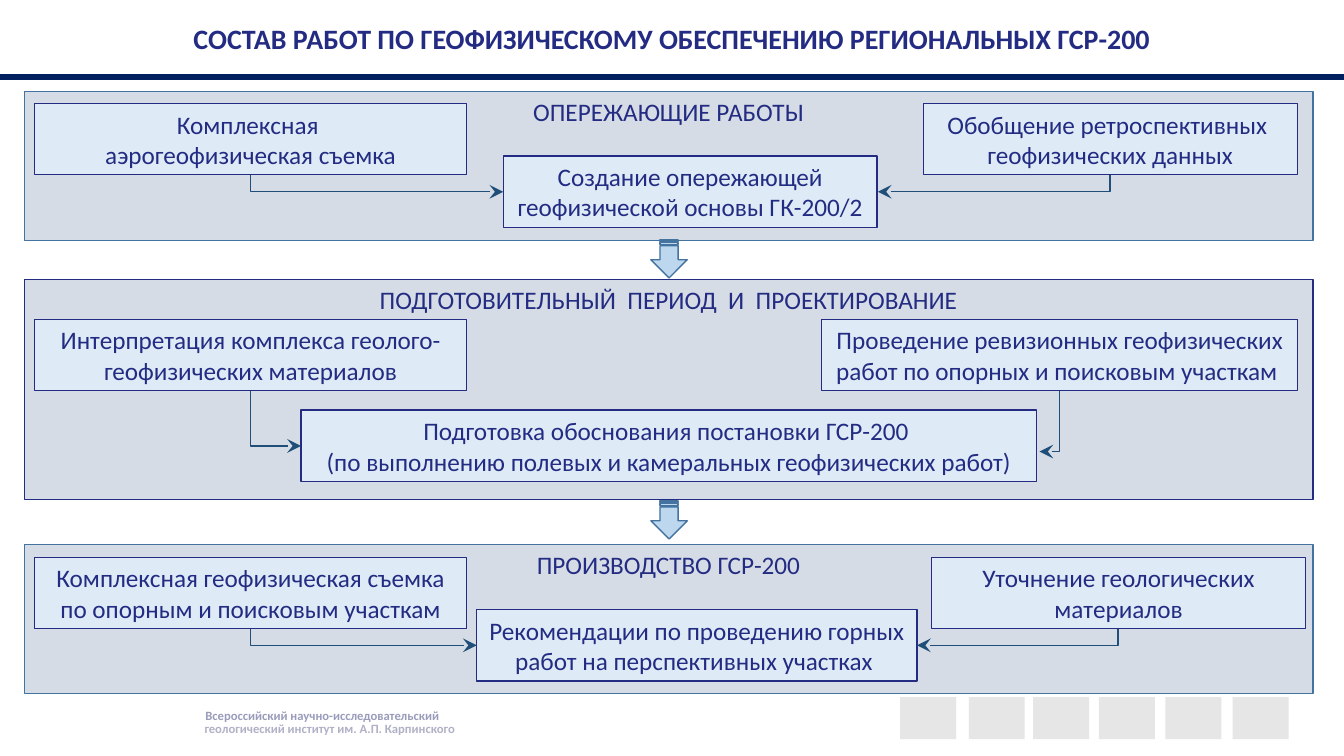
import pptx
import pptx.util
import pptx.dml.color
import pptx.enum.shapes
import pptx.enum.text
import pptx.oxml
import pptx.oxml.ns

Pt = pptx.util.Pt
RGB = pptx.dml.color.RGBColor
KIND = pptx.enum.shapes.MSO_SHAPE
LINK = pptx.enum.shapes.MSO_CONNECTOR
ALIGN = pptx.enum.text.PP_ALIGN
ANCHOR = pptx.enum.text.MSO_ANCHOR
qn = pptx.oxml.ns.qn

NAVY = RGB(0x23, 0x2C, 0x82)
RULE = RGB(0x00, 0x20, 0x60)
PANEL = RGB(0xD6, 0xDC, 0xE5)
EDGE = RGB(0x43, 0x73, 0x9E)
PALE = RGB(0xDE, 0xEB, 0xF7)
ARROW = RGB(0xBD, 0xD7, 0xEE)
WIRE = RGB(0x1F, 0x4E, 0x79)
GREY = RGB(0xD9, 0xD9, 0xD9)
LILAC = RGB(0x9A, 0x9C, 0xBB)
MIST = RGB(0xB0, 0xB1, 0xC6)

deck = pptx.Presentation()
deck.slide_width, deck.slide_height = Pt(960), Pt(540)
slide = deck.slides.add_slide(deck.slide_layouts[5])
shapes = slide.shapes


def block(kind, area, fill, edge=None, width=1):
    shape = shapes.add_shape(kind, *map(Pt, area))
    shape.shadow.inherit = False
    shape.fill.solid()
    shape.fill.fore_color.rgb = fill
    if edge is None:
        shape.line.fill.background()
    else:
        shape.line.color.rgb = edge
        shape.line.width = Pt(width)
    return shape


def write(shape, lines, size=18, color=NAVY, bold=False, align=ALIGN.CENTER):
    frame = shape.text_frame
    frame.word_wrap = True
    for i, line in enumerate(lines):
        para = frame.paragraphs[0] if i == 0 else frame.add_paragraph()
        para.alignment = align
        run = para.add_run()
        run.text = line
        run.font.name = "Calibri"
        run.font.size = Pt(size)
        run.font.bold = bold
        run.font.color.rgb = color


title = shapes.title
title.left, title.top, title.width, title.height = Pt(0), Pt(0), Pt(960), Pt(55)
title.text_frame.vertical_anchor = ANCHOR.MIDDLE
write(title, ["СОСТАВ РАБОТ ПО ГЕОФИЗИЧЕСКОМУ ОБЕСПЕЧЕНИЮ РЕГИОНАЛЬНЫХ ГСР-200"],
      20, bold=True)

credits = [
    (139, 511.2, "геологический институт им. А.П. Карпинского", MIST),
    (139.6, 502, "Всероссийский научно-исследовательский", LILAC),
]
for left, top, words, color in credits:
    note = shapes.add_textbox(Pt(left), Pt(top), Pt(195), Pt(18))
    write(note, [words], 9, color, True, ALIGN.LEFT)
    note.text_frame.word_wrap = False

for left in (643, 692, 738, 785, 832.5, 880.5):
    tile = block(KIND.RECTANGLE, (left, 498, 40, 30), GREY)
    tint = tile.fill._xPr.find(".//" + qn("a:srgbClr"))
    tint.append(pptx.oxml.parse_xml(
        '<a:alpha xmlns:a="http://schemas.openxmlformats.org/drawingml/2006/main" val="65000"/>'))

stages = [
    (65.5, 106.5, EDGE, "ОПЕРЕЖАЮЩИЕ РАБОТЫ", [
        (25, 74, 308, 0.75, ["Комплексная ", "аэрогеофизическая съемка"]),
        (659.5, 74, 267, 0.75, ["Обобщение ретроспективных ", "геофизических данных"]),
        (359.5, 111.5, 267, 1, ["Создание опережающей геофизической основы ГК-200/2"]),
    ]),
    (199.5, 157.5, NAVY, "ПОДГОТОВИТЕЛЬНЫЙ  ПЕРИОД  И  ПРОЕКТИРОВАНИЕ", [
        (25, 228, 308, 0.75, ["Интерпретация комплекса геолого-геофизических материалов"]),
        (587, 228, 340, 0.75,
         ["Проведение ревизионных геофизических работ по опорных и поисковым участкам "]),
        (215, 293, 525.5, 1, ["Подготовка обоснования постановки ГСР-200 ",
                              "(по выполнению полевых и камеральных геофизических работ)"]),
    ]),
    (389, 106.5, EDGE, "ПРОИЗВОДСТВО ГСР-200", [
        (25, 398, 308, 0.75, ["Комплексная геофизическая съемка по опорным и поисковым участкам"]),
        (665.5, 398, 267, 0.75, ["Уточнение геологических материалов"]),
        (340.5, 435.5, 314.5, 1,
         ["Рекомендации по проведению горных работ на перспективных участках "]),
    ]),
]
for top, height, edge, head, boxes in stages:
    block(KIND.RECTANGLE, (17.3, top, 920.5, height), PANEL, edge)
    label = shapes.add_textbox(Pt(17.3), Pt(top), Pt(920.5), Pt(29))
    write(label, [head])
    for left, y, width, line, lines in boxes:
        write(block(KIND.RECTANGLE, (left, y, width, 51), PALE, NAVY, line), lines)

for top in (172, 358.5):
    arrow = block(KIND.STRIPED_RIGHT_ARROW, (464.4, top, 27, 26), ARROW, EDGE)
    arrow.rotation = 90

wires = [
    (179, 125, 359.5, 137),
    (793, 125, 627, 137),
    (179, 279, 215, 318.5),
    (757, 279, 742.5, 322.5),
    (179, 449, 340.5, 461),
    (798.5, 449, 655, 461),
]
links = [shapes.add_connector(LINK.STRAIGHT, Pt(0), Pt(55), Pt(960), Pt(55))]
for x1, y1, x2, y2 in wires:
    wide, high = y2 - y1, abs(x2 - x1)
    left, top = (x1 + x2 - wide) / 2, (y1 + y2 - high) / 2
    ends = (left, left + wide) if x2 < x1 else (left + wide, left)
    wire = shapes.add_connector(LINK.ELBOW, Pt(ends[0]), Pt(top), Pt(ends[1]), Pt(top + high))
    props = wire._element.spPr
    props.find(qn("a:xfrm")).set("rot", "5400000" if x2 < x1 else "16200000")
    props.find(qn("a:prstGeom")).set("prst", "bentConnector2")
    links.append(wire)

for link in links:
    flat = link is links[0]
    link.line.color.rgb = RULE if flat else WIRE
    link.line.width = Pt(4.5 if flat else 1)
    if not flat:
        tip = link.line._get_or_add_ln().makeelement(
            qn("a:tailEnd"), {"type": "stealth", "w": "lg", "len": "lg"})
        link.line._get_or_add_ln().append(tip)
    props = link._element.spPr
    props.append(props.makeelement(qn("a:effectLst"), {}))

deck.save("out.pptx")
